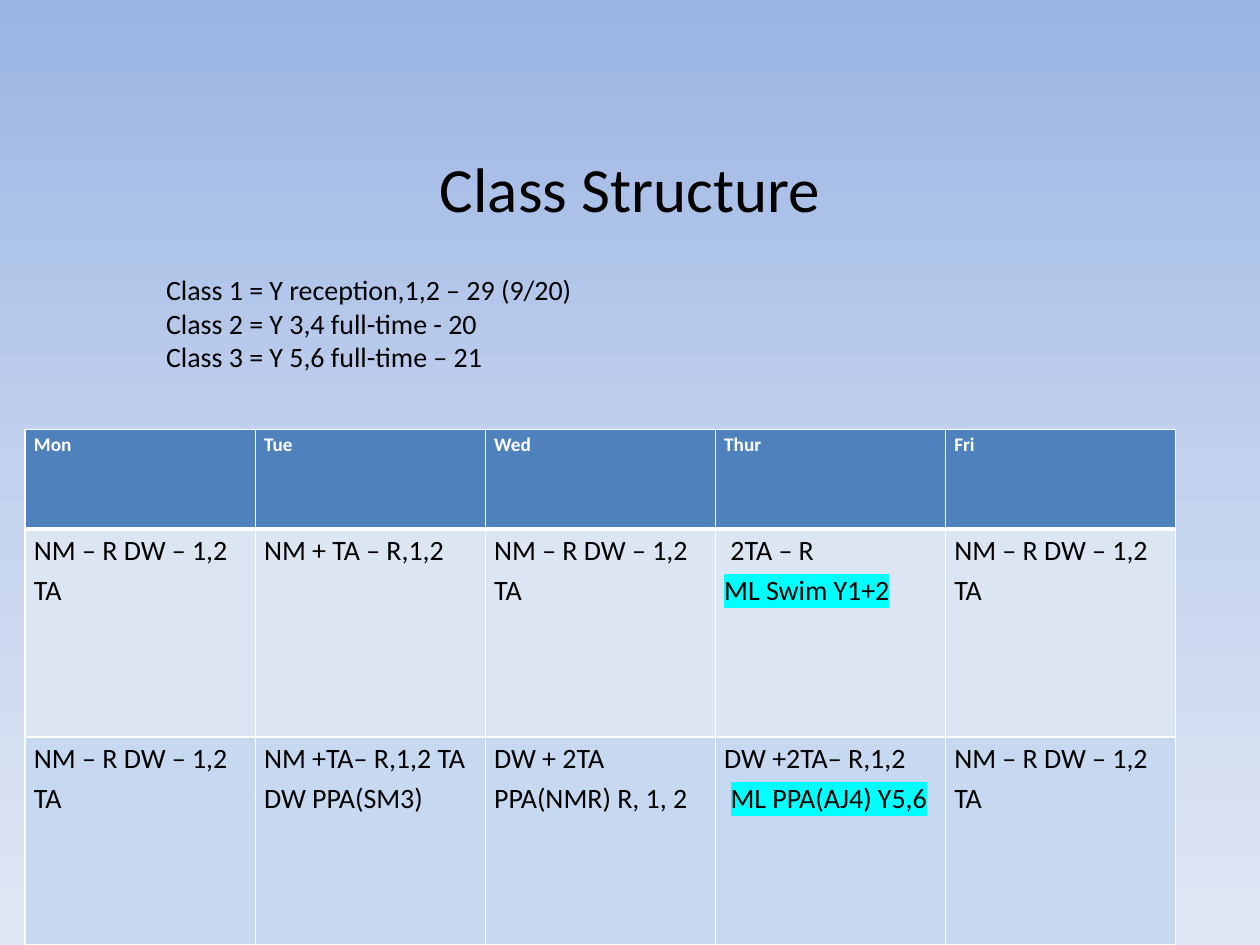
import copy

import pptx
import pptx.dml.color
import pptx.enum.text
import pptx.oxml
import pptx.oxml.ns
import pptx.util

Inches = pptx.util.Inches
Pt = pptx.util.Pt
qn = pptx.oxml.ns.qn
PP_ALIGN = pptx.enum.text.PP_ALIGN

COLORS = {
    "bg_top": "9AB5E4",
    "bg_middle": "C2D1ED",
    "bg_bottom": "E1E8F5",
    "text": "000000",
    "header_text": "FFFFFF",
    "border": "FFFFFF",
    "header": "4F81BD",
    "morning": "DCE6F2",
    "afternoon": "C6D9F1",
    "highlight": "00FFFF",
}
FONT = "Calibri"
BODY = {"size": Pt(16), "bold": False}
HEADING = {"size": Pt(11), "bold": True}

CLASSES = [
    "Class 1 = Y reception,1,2 – 29 (9/20)",
    "Class 2 = Y 3,4 full-time - 20",
    "Class 3 = Y 5,6 full-time – 21",
]
DAYS = ["Mon", "Tue", "Wed", "Thur", "Fri"]
USUAL = ["NM – R DW – 1,2", "TA"]
MORNING = [USUAL, ["NM + TA – R,1,2"], USUAL, [" 2TA – R", "ML Swim Y1+2"], USUAL]
AFTERNOON = [
    USUAL,
    ["NM +TA– R,1,2 TA DW PPA(SM3)"],
    ["DW + 2TA", "PPA(NMR) R, 1, 2"],
    ["DW +2TA– R,1,2", " ML PPA(AJ4) Y5,6"],
    USUAL,
]


def rgb(name):
    return pptx.dml.color.RGBColor.from_string(COLORS[name])


def xml(text):
    return pptx.oxml.parse_xml(text.replace(">", f" {pptx.oxml.ns.nsdecls('a')}>", 1))


def set_attrs(obj, values):
    for name, value in values.items():
        setattr(obj, name, value)


def set_background(slide):
    fill = slide.background.fill
    fill.gradient()
    fill.gradient_angle = 270
    stops = next(slide.element.iter(qn("a:gsLst")))
    stops.insert(1, copy.deepcopy(stops[0]))
    names = ["bg_top", "bg_middle", "bg_bottom"]
    for stop, position, name in zip(fill.gradient_stops, [0, 0.5, 1], names):
        stop.position = position
        stop.color.rgb = rgb(name)


def add_run(p, text, font, color="text", highlight=False):
    r = p.add_run()
    r.text = text
    set_attrs(r.font, {"name": FONT, **font})
    r.font.color.rgb = rgb(color)
    if highlight:
        mark = xml(f'<a:highlight><a:srgbClr val="{COLORS["highlight"]}"/></a:highlight>')
        r.font.fill._xPr.find(qn("a:solidFill")).addnext(mark)


def add_text(slide, box, lines, font, align, wrap):
    sp = slide.shapes.add_textbox(*map(Inches, box))
    tf = sp.text_frame
    set_attrs(tf, {"word_wrap": wrap, "vertical_anchor": pptx.enum.text.MSO_ANCHOR.MIDDLE})
    for i, line in enumerate(lines):
        p = tf.add_paragraph() if i else tf.paragraphs[0]
        p.alignment = align
        add_run(p, line, font)


def set_borders(cell, top, bottom):
    sides = {"L": 1, "R": 1, "T": top, "B": bottom}
    for i, (side, width) in enumerate(sides.items()):
        line = xml(
            f'<a:ln{side} w="{Pt(width)}"><a:solidFill>'
            f'<a:srgbClr val="{COLORS["border"]}"/></a:solidFill></a:ln{side}>'
        )
        cell._tc.get_or_add_tcPr().insert(i, line)


def fill_cell(cell, lines, fill, font, color):
    set_attrs(cell, {
        "margin_left": Inches(0.07), "margin_right": Inches(0.07),
        "margin_top": 0, "margin_bottom": 0,
    })
    cell.fill.solid()
    cell.fill.fore_color.rgb = rgb(fill)
    tf = cell.text_frame
    for i, line in enumerate(lines):
        p = tf.add_paragraph() if i else tf.paragraphs[0]
        p.line_spacing = 1.15
        marked = line.strip().startswith("ML")
        if marked and line.startswith(" "):
            add_run(p, " ", font, color)
            line = line.strip()
        add_run(p, line, font, color, marked)


def add_timetable(slide):
    rows = [
        ([[day] for day in DAYS], 0.79, "header", HEADING, "header_text", 1, 3),
        (MORNING, 1.65, "morning", BODY, "text", 3, 1),
        (AFTERNOON, 1.65, "afternoon", BODY, "text", 1, 1),
    ]
    table = slide.shapes.add_table(
        len(rows), len(DAYS), Inches(0.2), Inches(3.41), Inches(9.13), Inches(4.09)
    ).table
    table.horz_banding = False
    for i, (cells, height, fill, font, color, top, bottom) in enumerate(rows):
        table.rows[i].height = Inches(height)
        for j, lines in enumerate(cells):
            cell = table.cell(i, j)
            fill_cell(cell, lines, fill, font, color)
            set_borders(cell, top, bottom)


def main():
    prs = pptx.Presentation()
    set_attrs(prs, {"slide_width": Inches(10), "slide_height": Inches(7.5)})
    slide = prs.slides.add_slide(prs.slide_layouts[6])
    set_background(slide)
    add_text(slide, (0.75, 0.68, 8.5, 1.61), ["Class Structure"],
             {"size": Pt(36)}, PP_ALIGN.CENTER, True)
    add_timetable(slide)
    add_text(slide, (1.22, 2.11, 3.46, 0.91), CLASSES, BODY, PP_ALIGN.LEFT, False)
    prs.save("out.pptx")


if __name__ == "__main__":
    main()
